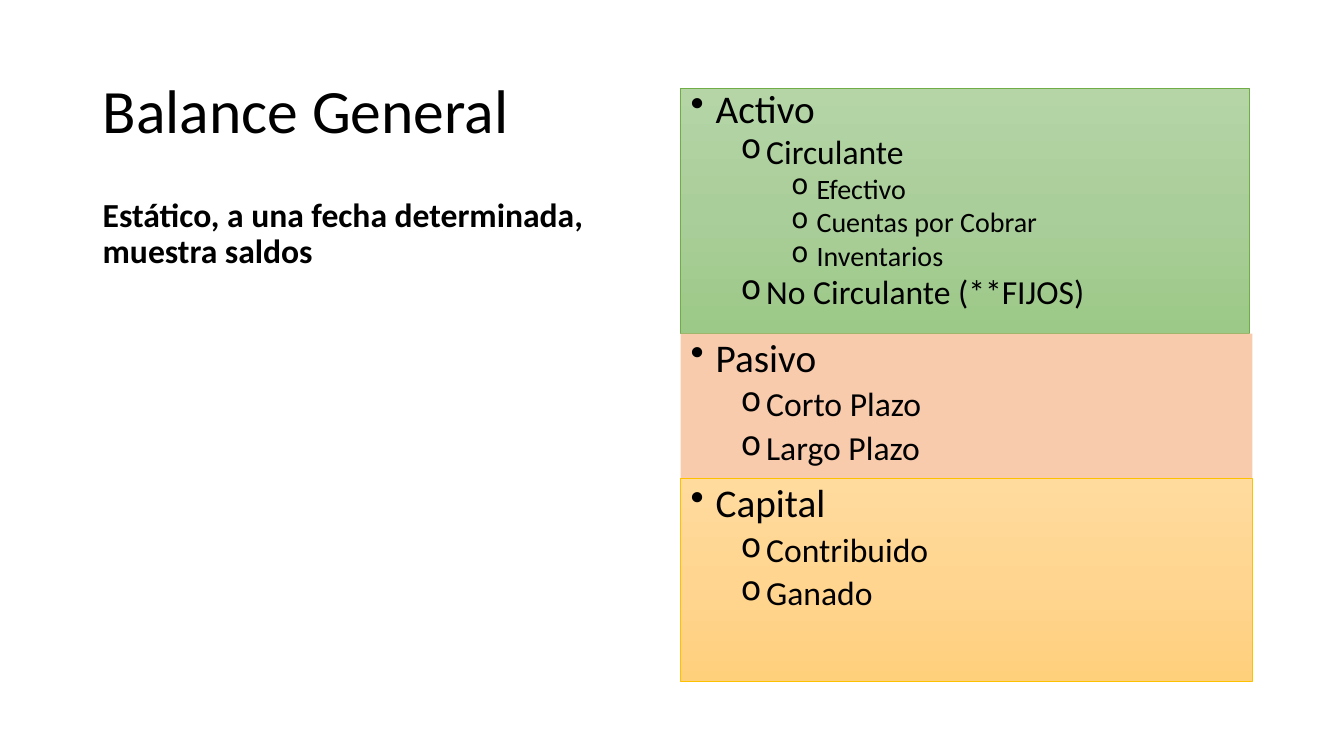
from copy import deepcopy
from dataclasses import dataclass

from lxml.etree import SubElement
from pptx import Presentation
from pptx.dml.color import RGBColor
from pptx.enum.shapes import MSO_SHAPE
from pptx.enum.text import MSO_ANCHOR, PP_ALIGN
from pptx.oxml.ns import qn
from pptx.util import Inches, Pt


@dataclass(frozen=True)
class Theme:
    font: str = "Calibri"
    text: str = "000000"
    title_size: int = 44
    summary_size: int = 24
    level_sizes: tuple = (28, 24, 20)
    assets: tuple = ("B5D5A7", "AACE9A", "9CC987")
    assets_line: str = "70AD47"
    liabilities: tuple = ("F8CBAD",)
    equity: tuple = ("FFDB9E", "FFD590", "FFD07C")
    equity_line: str = "FFC000"


THEME = Theme()
PAGE_WIDTH, PAGE_HEIGHT = Inches(13.33), Inches(7.5)

# Positions and sizes are percentages of the page.
TEXT_LEFT = 6.9
ACCOUNTS_LEFT, ACCOUNTS_TOP = 50.64, 11.73

# Each account is (level, name).
ASSETS = [
    (0, "Activo"),
    (1, "Circulante"),
    (2, "Efectivo"),
    (2, "Cuentas por Cobrar"),
    (2, "Inventarios"),
    (1, "No Circulante (**FIJOS)"),
]
LIABILITIES = [(0, "Pasivo"), (1, "Corto Plazo"), (1, "Largo Plazo")]
EQUITY = [(0, "Capital"), (1, "Contribuido"), (1, "Ganado")]


def place(left, top, width, height):
    """Turn percentages of the page into lengths."""
    return (
        int(PAGE_WIDTH * left / 100),
        int(PAGE_HEIGHT * top / 100),
        int(PAGE_WIDTH * width / 100),
        int(PAGE_HEIGHT * height / 100),
    )


def style_paragraph(para, size, spacing=0.9, before=10, bold=False):
    para.alignment = PP_ALIGN.LEFT
    para.line_spacing = spacing
    para.space_before = Pt(before)
    for span in para.runs:
        span.font.name = THEME.font
        span.font.size = Pt(size)
        span.font.bold = bold
        span.font.color.rgb = RGBColor.from_string(THEME.text)


def add_label(page, text, area, size, anchor, bold=False):
    frame = page.shapes.add_textbox(*place(*area)).text_frame
    frame.word_wrap = True
    frame.vertical_anchor = anchor
    frame.text = text
    style_paragraph(frame.paragraphs[0], size, bold=bold)


def fill_box(box, colors):
    """Fill with one colour, or with a top-to-bottom gradient of three."""
    if len(colors) == 1:
        box.fill.solid()
        box.fill.fore_color.rgb = RGBColor.from_string(colors[0])
        return
    box.fill.gradient()
    box.fill.gradient_angle = 270
    stop_list = box.fill._fill._gradFill.find(qn("a:gsLst"))
    stop_list.insert(1, deepcopy(stop_list[0]))
    for index, (stop, color) in enumerate(zip(box.fill.gradient_stops, colors)):
        stop.position = index / (len(colors) - 1)
        stop.color.rgb = RGBColor.from_string(color)


def outline_box(box, color):
    if color is None:
        box.line.fill.background()
        return
    box.line.color.rgb = RGBColor.from_string(color)
    box.line.width = Pt(0.5)


def add_bullet(para, level):
    properties = para._p.get_or_add_pPr()
    properties.set("marL", str(Inches(0.25 + 0.5 * level)))
    properties.set("indent", str(Inches(-0.25)))
    if level:
        properties.set("lvl", str(level))
    SubElement(properties, qn("a:buChar"), char="o" if level else "•")


def add_account_box(page, accounts, area, colors, line=None, spacing=0.9):
    box = page.shapes.add_shape(MSO_SHAPE.RECTANGLE, *place(*area))
    box.shadow.inherit = False
    fill_box(box, colors)
    outline_box(box, line)
    frame = box.text_frame
    frame.word_wrap = True
    frame.vertical_anchor = MSO_ANCHOR.TOP
    frame.text = "\n".join(name for _, name in accounts)
    for para, (level, _) in zip(frame.paragraphs, accounts):
        style_paragraph(para, THEME.level_sizes[level], spacing, 5 if level else 10)
        add_bullet(para, level)


def main():
    deck = Presentation()
    deck.slide_width, deck.slide_height = PAGE_WIDTH, PAGE_HEIGHT
    page = deck.slides.add_slide(deck.slide_layouts[6])

    add_label(page, "Balance General", (TEXT_LEFT, 5.33, 86.27, 19.33),
              THEME.title_size, MSO_ANCHOR.MIDDLE)
    add_label(page, "Estático, a una fecha determinada, muestra saldos",
              (TEXT_LEFT, 24.53, 42.31, 12), THEME.summary_size,
              MSO_ANCHOR.BOTTOM, bold=True)

    top = ACCOUNTS_TOP
    for accounts, width, height, colors, line, spacing in (
        (ASSETS, 42.31, 32.4, THEME.assets, THEME.assets_line, 0.8),
        (LIABILITIES, 42.54, 19.2, THEME.liabilities, None, 0.9),
        (EQUITY, 42.54, 26.8, THEME.equity, THEME.equity_line, 0.9),
    ):
        area = (ACCOUNTS_LEFT, top, width, height)
        add_account_box(page, accounts, area, colors, line, spacing)
        top += height

    deck.save("out.pptx")


if __name__ == "__main__":
    main()
